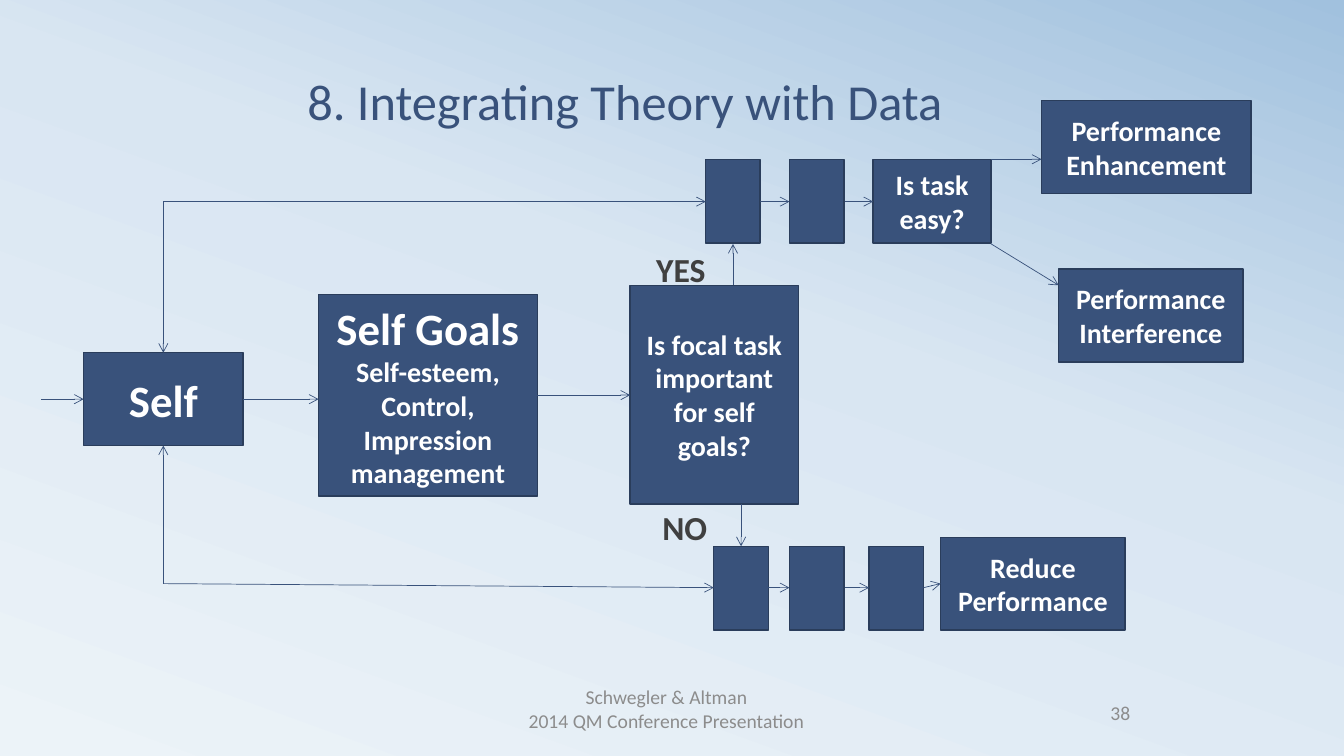
from copy import deepcopy

from lxml import etree
from pptx import Presentation
from pptx.dml.color import RGBColor
from pptx.enum.shapes import MSO_CONNECTOR, MSO_SHAPE
from pptx.enum.text import MSO_ANCHOR as ANCHOR, MSO_AUTO_SIZE, PP_ALIGN as ALIGN
from pptx.oxml.ns import qn
from pptx.util import Inches, Pt

NAVY = RGBColor(0x39, 0x52, 0x7B)
OUTLINE = RGBColor(0x2A, 0x3D, 0x5B)
WHITE = RGBColor(0xFF, 0xFF, 0xFF)
LABEL_GRAY = RGBColor(0x40, 0x40, 0x40)
FOOTER_GRAY = RGBColor(0x8C, 0x8C, 0x8C)
SKY = [(0, RGBColor(0xEC, 0xF3, 0xF8)),
       (0.58, RGBColor(0xD9, 0xE6, 0xF2)),
       (1, RGBColor(0xA1, 0xC1, 0xDE))]


def write(shape, lines, color, bold=False, align=ALIGN.CENTER, anchor=ANCHOR.MIDDLE):
    """Fill a shape with one paragraph per (text, size) pair."""
    frame = shape.text_frame
    frame.word_wrap = True
    frame.vertical_anchor = anchor
    for index, (text, size) in enumerate(lines):
        paragraph = frame.add_paragraph() if index else frame.paragraphs[0]
        paragraph.alignment = align
        run = paragraph.add_run()
        run.text = text
        run.font.name = "Calibri"
        run.font.size = Pt(size)
        run.font.bold = bold
        run.font.color.rgb = color


presentation = Presentation()
presentation.slide_width = Inches(13.33)
presentation.slide_height = Inches(7.5)
slide = presentation.slides.add_slide(presentation.slide_layouts[6])
shapes = slide.shapes

# Background gradient, light at the lower left
background = slide.background.fill
background.gradient()
background.gradient_angle = 70
first_stop = background.gradient_stops[0]._gs
first_stop.addnext(deepcopy(first_stop))
for stop, (position, color) in zip(background.gradient_stops, SKY):
    stop.position = position
    stop.color.rgb = color

# Title and footer
title = shapes.add_textbox(Inches(2.95), Inches(0.17), Inches(9.43), Inches(1.17))
write(title, [("8. Integrating Theory with Data", 36)], NAVY,
      align=ALIGN.LEFT, anchor=ANCHOR.BOTTOM)
title.text_frame.paragraphs[0].line_spacing = 0.8

footer = shapes.add_textbox(Inches(4.5), Inches(6.83), Inches(4.22), Inches(0.4))
write(footer, [("Schwegler & Altman", 14), ("2014 QM Conference Presentation", 14)],
      FOOTER_GRAY)
slide_number = shapes.add_textbox(Inches(9.25), Inches(6.83), Inches(2.06), Inches(0.48))
write(slide_number, [("38", 14)], FOOTER_GRAY, align=ALIGN.RIGHT)

# Boxes: left, top, width, height, lines
STEP_WIDTH, STEP_HEIGHT = 0.54, 0.83
UPPER_TOP, LOWER_TOP = 1.58, 5.42
boxes = [
    (0.83, 3.5, 1.58, 0.92, [("Self", 32)]),
    (3.16, 2.92, 2.17, 2, [("Self Goals", 32), ("Self-esteem,", 20), ("Control,", 20),
                           ("Impression management", 20)]),
    (6.25, 2.83, 1.67, 2.17, [("Is focal task important for self goals?", 20)]),
    (9.33, 5.33, 1.83, 0.92, [("Reduce Performance", 20)]),
    (10.5, 2.67, 1.83, 0.92, [("Performance", 20), ("Interference", 20)]),
    (10.33, 1, 2.08, 0.92, [("Performance", 20), ("Enhancement", 20)]),
    (8.66, UPPER_TOP, 1.17, STEP_HEIGHT, [("Is task easy?", 20)]),
]
steps = [(7, UPPER_TOP), (7.83, UPPER_TOP),
         (7.08, LOWER_TOP), (7.83, LOWER_TOP), (8.62, LOWER_TOP)]
boxes += [(left, top, STEP_WIDTH, STEP_HEIGHT, []) for left, top in steps]

for left, top, width, height, lines in boxes:
    box = shapes.add_shape(MSO_SHAPE.RECTANGLE, Inches(left), Inches(top),
                           Inches(width), Inches(height))
    box.shadow.inherit = False
    box.fill.solid()
    box.fill.fore_color.rgb = NAVY
    box.line.color.rgb = OUTLINE
    box.line.width = Pt(1)
    write(box, lines, WHITE, bold=True)

# Arrows: start x, start y, end x, end y
SELF_X, SELF_Y = 1.62, 3.96
UPPER_Y, LOWER_Y, RETURN_Y = 2, 5.83, 5.79
arrows = [
    (0.41, SELF_Y, 0.83, SELF_Y),
    (2.41, SELF_Y, 3.16, SELF_Y),
    (5.33, 3.92, 6.25, 3.92),
    (7.27, 2.83, 7.27, 2.42),
    (7.35, 5, 7.35, LOWER_TOP),
    (7.54, UPPER_Y, 7.83, UPPER_Y),
    (8.38, UPPER_Y, 8.66, UPPER_Y),
    (9.83, UPPER_TOP, 10.33, UPPER_TOP),
    (9.83, 2.42, 10.5, 2.83),
    (7.62, LOWER_Y, 7.83, LOWER_Y),
    (8.38, LOWER_Y, 8.62, LOWER_Y),
    (9.16, LOWER_Y, 9.33, RETURN_Y),
    (SELF_X, RETURN_Y, 7.08, LOWER_Y),
    (SELF_X, RETURN_Y, SELF_X, 4.42),
    (SELF_X, UPPER_Y, 7, UPPER_Y),
    (SELF_X, UPPER_Y, SELF_X, 3.5),
]
for points in arrows:
    arrow = shapes.add_connector(MSO_CONNECTOR.STRAIGHT, *map(Inches, points))
    arrow.line.color.rgb = NAVY
    arrow.line.width = Pt(0.5)
    properties = arrow._element.spPr
    etree.SubElement(properties.find(qn("a:ln")), qn("a:tailEnd"), type="arrow")
    etree.SubElement(properties, qn("a:effectLst"))

# Branch labels
for answer, left, top, width in [("YES", 6.41, 2.42, 0.8), ("NO", 6.47, 4.98, 0.69)]:
    label = shapes.add_textbox(Inches(left), Inches(top), Inches(width), Inches(0.5))
    write(label, [(answer, 24)], LABEL_GRAY, bold=True, align=ALIGN.LEFT, anchor=ANCHOR.TOP)
    label.text_frame.word_wrap = False
    label.text_frame.auto_size = MSO_AUTO_SIZE.SHAPE_TO_FIT_TEXT

presentation.save("out.pptx")
